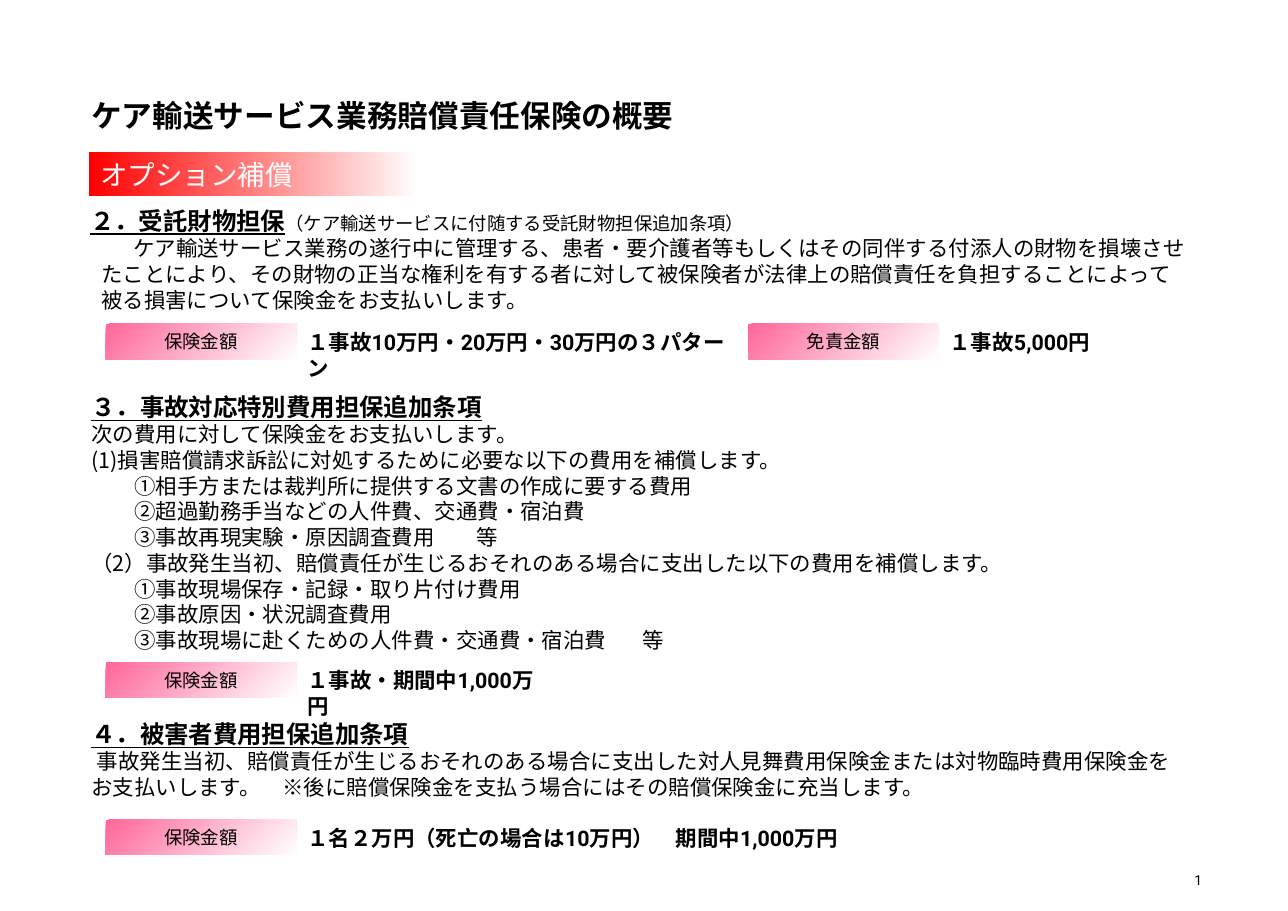
from dataclasses import dataclass

from lxml import etree
from pptx import Presentation
from pptx.dml.color import RGBColor
from pptx.enum.shapes import MSO_SHAPE
from pptx.enum.text import MSO_ANCHOR, MSO_AUTO_SIZE, PP_ALIGN
from pptx.oxml.ns import qn
from pptx.shapes.base import BaseShape
from pptx.slide import Slide
from pptx.util import Inches, Pt

RECT = MSO_SHAPE.RECTANGLE
TOP, MIDDLE = MSO_ANCHOR.TOP, MSO_ANCHOR.MIDDLE
GROW, FIXED = MSO_AUTO_SIZE.SHAPE_TO_FIT_TEXT, MSO_AUTO_SIZE.NONE
LEFT, CENTER, RIGHT = PP_ALIGN.LEFT, PP_ALIGN.CENTER, PP_ALIGN.RIGHT
JUSTIFY = PP_ALIGN.JUSTIFY

COLORS = {"ink": "000000", "white": "FFFFFF", "red": "FF0000", "pink": "FF6699"}
SANS, ROBOTO = "Noto Sans CJK JP", "Roboto"
TAG_WIDTH, TAG_HEIGHT = 1.73, 0.32


@dataclass
class Run:
    text: str
    size: float = 14
    bold: bool = False
    under: bool = False
    color: str = "ink"
    font: str = SANS


@dataclass
class Line:
    runs: list[Run]
    margin: float = 0
    indent: float = 0
    tab: float = 0
    align: PP_ALIGN = LEFT


@dataclass
class Amount:
    x: float
    y: float
    tag: str
    value: str
    width: float


def head(text: str) -> Run:
    return Run(text, 16, bold=True, under=True)


def item(text: str, tab: float = 0) -> Line:
    return Line([Run(text)], indent=0.39, tab=tab)


def write(shape: BaseShape, lines: list[Line], *, anchor: MSO_ANCHOR = TOP,
          wrap: bool = True, fit: MSO_AUTO_SIZE = GROW, inset: bool = True) -> None:
    frame = shape.text_frame
    frame.word_wrap, frame.auto_size = wrap, fit
    frame.vertical_anchor = anchor
    if not inset:
        frame.margin_left = frame.margin_right = 0
        frame.margin_top = frame.margin_bottom = 0
    for index, line in enumerate(lines):
        para = frame.add_paragraph() if index else frame.paragraphs[0]
        para.alignment = line.align
        props = para._p.get_or_add_pPr()
        props.set("marL", str(Inches(line.margin)))
        props.set("indent", str(Inches(line.indent)))
        if line.tab:
            stops = etree.SubElement(props, qn("a:tabLst"))
            etree.SubElement(stops, qn("a:tab"), pos=str(Inches(line.tab)), algn="l")
        for part in line.runs:
            run = para.add_run()
            run.text = part.text
            font = run.font
            font.size, font.bold, font.underline = Pt(part.size), part.bold, part.under
            font.color.rgb = RGBColor.from_string(COLORS[part.color])
            font.name = part.font
            etree.SubElement(run._r.get_or_add_rPr(), qn("a:ea"), typeface=part.font)


def add_text(slide: Slide, x: float, y: float, width: float, height: float,
             lines: list[Line], inset: bool = True) -> None:
    box = slide.shapes.add_textbox(Inches(x), Inches(y), Inches(width), Inches(height))
    write(box, lines, inset=inset)


def add_band(slide: Slide, x: float, y: float, width: float, height: float,
             color: str, angle: float) -> BaseShape:
    band = slide.shapes.add_shape(RECT, Inches(x), Inches(y), Inches(width), Inches(height))
    band.shadow.inherit = False
    band.line.fill.background()
    band.fill.gradient()
    band.fill.gradient_angle = angle
    for stop, name in zip(band.fill.gradient_stops, (color, "white")):
        stop.color.rgb = RGBColor.from_string(COLORS[name])
    return band


def add_amount(slide: Slide, row: Amount) -> None:
    tag = add_band(slide, row.x, row.y, TAG_WIDTH, TAG_HEIGHT, "pink", 315)
    write(tag, [Line([Run(row.tag, 12)], align=CENTER)],
          anchor=MIDDLE, wrap=False, fit=FIXED)
    add_text(slide, row.x + TAG_WIDTH, row.y, row.width, 0.33,
             [Line([Run(row.value, bold=True, font=ROBOTO)])])


CUSTODY = [
    Line([head("２．受託財物担保"),
          Run("（ケア輸送サービスに付随する受託財物担保追加条項）", 12)], 0.1, -0.1),
    Line([Run("ケア輸送サービス業務の遂行中に管理する、患者・要介護者等もしくはその同伴する付添人の"
              "財物を損壊させたことにより、その財物の正当な権利を有する者に対して被保険者が法律上の"
              "賠償責任を負担することによって被る損害について保険金をお支払いします。")], 0.1, 0.29),
]
COSTS = [
    Line([head("３．事故対応特別費用担保追加条項")]),
    Line([Run("次の費用に対して保険金をお支払いします。")]),
    Line([Run("(1)損害賠償請求訴訟に対処するために必要な以下の費用を補償します。")]),
    item("①相手方または裁判所に提供する文書の作成に要する費用"),
    item("②超過勤務手当などの人件費、交通費・宿泊費"),
    item("③事故再現実験・原因調査費用\t等", tab=5.88),
    Line([Run("（2）事故発生当初、賠償責任が生じるおそれのある場合に支出した以下の費用を補償します。")]),
    item("①事故現場保存・記録・取り片付け費用"),
    item("②事故原因・状況調査費用"),
    item("③事故現場に赴くための人件費・交通費・宿泊費\t等", tab=5.44),
]
VICTIM = [
    Line([head("４．被害者費用担保追加条項")]),
    Line([Run("事故発生当初、賠償責任が生じるおそれのある場合に支出した対人見舞費用保険金または"
              "対物臨時費用保険金をお支払いします。　※後に賠償保険金を支払う場合には"
              "その賠償保険金に充当します。")], indent=0.05, align=JUSTIFY),
]
AMOUNTS = [
    Amount(0.96, 2.94, "保険金額", "１事故10万円・20万円・30万円の３パターン", 4.02),
    Amount(6.79, 2.94, "免責金額", "１事故5,000円", 1.57),
    Amount(0.96, 6.01, "保険金額", "１事故・期間中1,000万円", 2.44),
    Amount(0.96, 7.44, "保険金額", "１名２万円（死亡の場合は10万円）　期間中1,000万円", 5.36),
]


def main() -> None:
    deck = Presentation()
    deck.slide_width, deck.slide_height = Inches(11.69), Inches(8.27)
    slide = deck.slides.add_slide(deck.slide_layouts[6])

    # Title and section band
    add_text(slide, 0.73, 0.83, 6.83, 0.43,
             [Line([Run("ケア輸送サービス業務賠償責任保険の概要", 20, bold=True)])])
    band = add_band(slide, 0.81, 1.38, 2.99, 0.4, "red", 0)
    write(band, [Line([Run("オプション補償", 18, color="white")])], anchor=MIDDLE)

    # Clauses
    add_text(slide, 0.72, 1.82, 10.17, 1.07, CUSTODY)
    add_text(slide, 0.73, 3.51, 10.24, 2.46, COSTS)
    add_text(slide, 0.73, 6.48, 10, 0.83, VICTIM)

    # Insured amounts and deductible
    for row in AMOUNTS:
        add_amount(slide, row)

    # Page number
    add_text(slide, 10.32, 7.91, 0.59, 0.15,
             [Line([Run("1", 9, font=ROBOTO)], align=RIGHT)], inset=False)

    deck.save("out.pptx")


if __name__ == "__main__":
    main()
